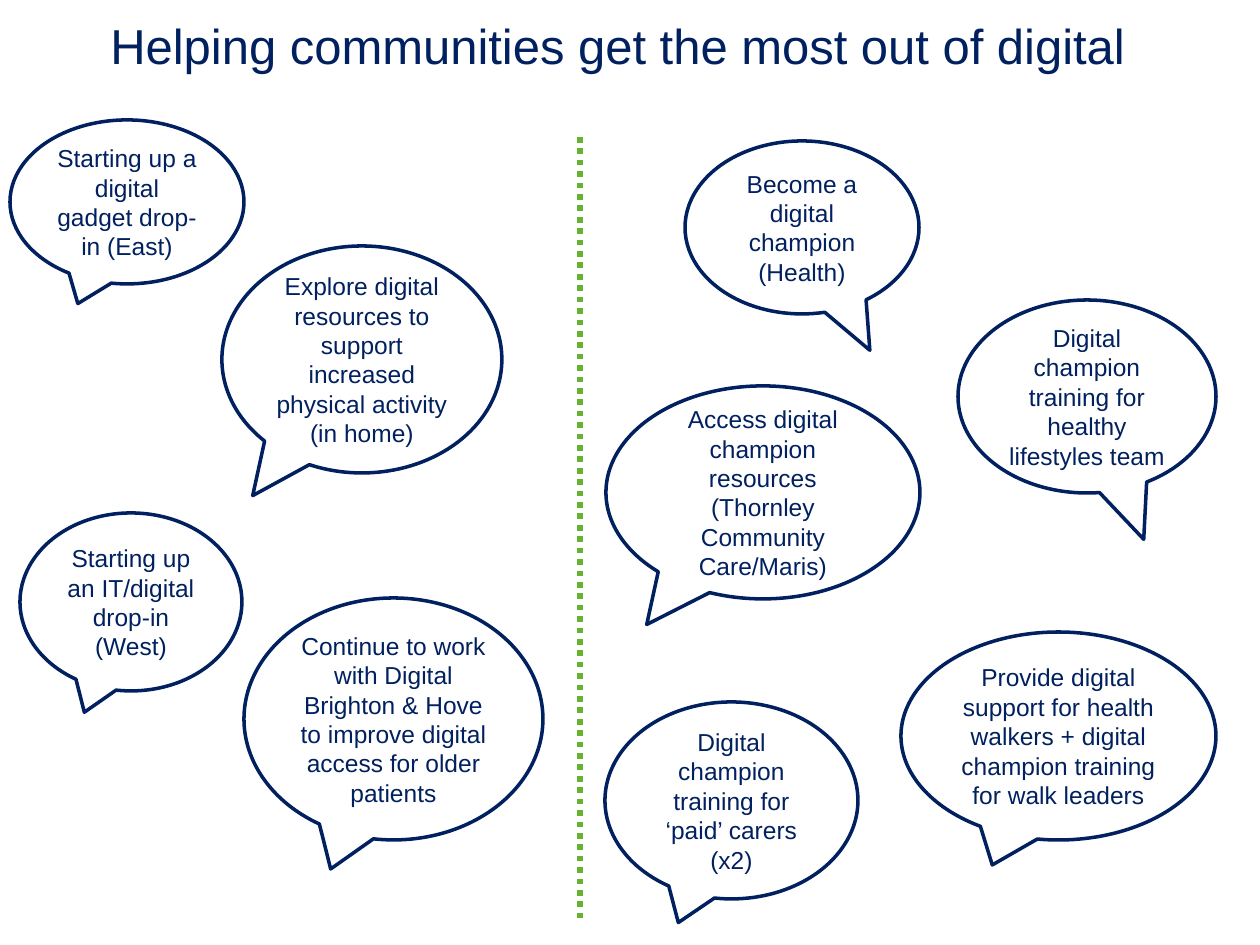
from lxml import etree
from pptx import Presentation, util as u
from pptx.dml.color import RGBColor
from pptx.enum import dml, shapes, text
from pptx.oxml.ns import qn

PX = 914400 / 126
NAVY, GREEN, WHITE = "002060", "65B32E", "FFFFFF"
DEFAULT_TAIL = (-0.21, 0.62)

# left, top, width, height, paragraphs, tail tip, fill
BUBBLES = [
    (10, 120, 234, 164, ["Starting up a digital gadget drop-in (East)"], DEFAULT_TAIL, None),
    (901, 632, 315, 208, ["Provide digital support for health walkers + digital "
                          "champion training for walk leaders"], DEFAULT_TAIL, None),
    (958, 300, 258, 193, ["Digital champion training for healthy lifestyles team"],
     (0.22, 0.74), None),
    (605, 702, 253, 197, ["Digital champion training for ‘paid’ carers (x2)"],
     DEFAULT_TAIL, None),
    (685, 141, 234, 173, ["Become a digital champion (Health)"], (0.29, 0.71), None),
    (606, 386, 314, 213, ["Access digital champion resources",
                          "(Thornley Community Care/Maris)"], (-0.37, 0.62), None),
    (20, 513, 222, 178, ["Starting up an IT/digital drop-in (West)"], DEFAULT_TAIL, None),
    (222, 246, 280, 227, ["Explore digital resources to support increased "
                          "physical activity (in home)"], (-0.39, 0.6), WHITE),
    (244, 598, 299, 242, ["Continue to work with Digital Brighton & Hove to improve "
                          "digital access for older patients"], DEFAULT_TAIL, None),
]


def px(*lengths):
    return [u.Emu(round(length * PX)) for length in lengths]


def color(hex_code):
    return RGBColor.from_string(hex_code)


def write(frame, paragraphs, size, anchor=text.MSO_ANCHOR.TOP):
    frame.word_wrap = True
    frame.vertical_anchor = anchor
    for index, wording in enumerate(paragraphs):
        paragraph = frame.add_paragraph() if index else frame.paragraphs[0]
        paragraph.alignment = text.PP_ALIGN.CENTER
        run = paragraph.add_run()
        run.text = wording
        run.font.name = "Arial"
        run.font.size = u.Pt(size)
        run.font.color.rgb = color(NAVY)


def add_title(slide, wording):
    title = slide.shapes.add_textbox(*px(84, 9, 1067, 72))
    write(title.text_frame, [wording], size=28)
    title.text_frame.auto_size = text.MSO_AUTO_SIZE.SHAPE_TO_FIT_TEXT


def add_bubble(slide, left, top, width, height, paragraphs, tail, fill):
    bubble = slide.shapes.add_shape(shapes.MSO_SHAPE.OVAL_CALLOUT,
                                    *px(left, top, width, height))
    bubble.shadow.inherit = False
    bubble.adjustments[0], bubble.adjustments[1] = tail
    if fill:
        bubble.fill.solid()
        bubble.fill.fore_color.rgb = color(fill)
    else:
        bubble.fill.background()
    bubble.line.color.rgb = color(NAVY)
    bubble.line.width = u.Pt(2)
    write(bubble.text_frame, paragraphs, size=14, anchor=text.MSO_ANCHOR.MIDDLE)


def add_divider(slide, x, top, bottom):
    divider = slide.shapes.add_connector(shapes.MSO_CONNECTOR.STRAIGHT,
                                         *px(x, top, x, bottom))
    divider.line.color.rgb = color(GREEN)
    divider.line.width = u.Pt(3.25)
    divider.line.dash_style = dml.MSO_LINE.ROUND_DOT
    # An empty effect list removes the theme shadow
    etree.SubElement(divider._element.spPr, qn("a:effectLst"))


def main():
    deck = Presentation()
    deck.slide_width, deck.slide_height = px(1260, 945)
    slide = deck.slides.add_slide(deck.slide_layouts[6])

    add_title(slide, "Helping communities get the most out of digital")

    # Speech bubbles on both sides of the dotted divider
    for bubble in BUBBLES:
        add_bubble(slide, *bubble)
    add_divider(slide, x=580, top=137, bottom=919)

    deck.save("out.pptx")


if __name__ == "__main__":
    main()
